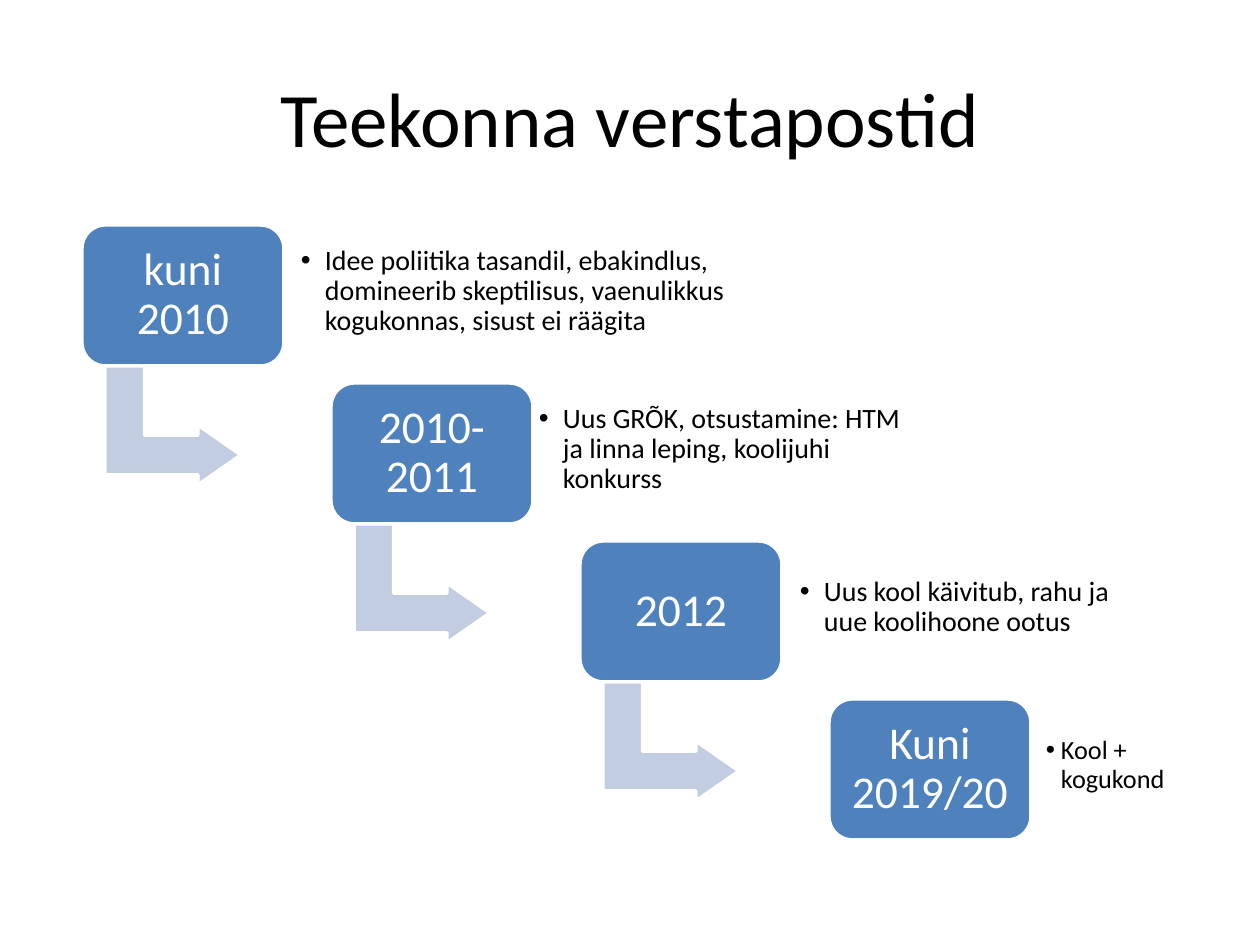
from lxml import etree
from pptx import Presentation
from pptx.dml.color import RGBColor
from pptx.enum.shapes import MSO_SHAPE
from pptx.enum.text import MSO_ANCHOR, PP_ALIGN
from pptx.oxml.ns import qn
from pptx.util import Emu, Pt

ROUNDED, BENT_ARROW = MSO_SHAPE.ROUNDED_RECTANGLE, MSO_SHAPE.BENT_UP_ARROW
MIDDLE = MSO_ANCHOR.MIDDLE
CENTER, LEFT = PP_ALIGN.CENTER, PP_ALIGN.LEFT
COLORS = {"step": "4F81BD", "arrow": "C2CDE1", "white": "FFFFFF", "text": "000000"}


def px(*lengths):
    return [Emu(round(length * 914400 / 126)) for length in lengths]


def write(shape, text, size, color="text", align=CENTER, inset=13, spacing=0.9, indent=0):
    frame = shape.text_frame
    frame.word_wrap = True
    frame.vertical_anchor = MIDDLE
    (frame.margin_left, frame.margin_top,
     frame.margin_right, frame.margin_bottom) = px(inset, inset, inset, inset)
    paragraph = frame.paragraphs[0]
    paragraph.text = text
    paragraph.alignment = align
    paragraph.line_spacing = spacing
    if indent:
        hang = px(indent)[0]
        properties = paragraph._p.get_or_add_pPr()
        properties.set("marL", str(hang))
        properties.set("indent", str(-hang))
        etree.SubElement(properties, qn("a:buFont")).set("typeface", "Arial")
        etree.SubElement(properties, qn("a:buChar")).set("char", "•")
    font = paragraph.runs[0].font
    font.name = "Calibri"
    font.size = Pt(size)
    font.color.rgb = RGBColor.from_string(COLORS[color])


prs = Presentation()
prs.slide_width, prs.slide_height = px(1260, 945)
slide = prs.slides.add_slide(prs.slide_layouts[6])
shapes = slide.shapes

# Title
title = shapes.add_textbox(*px(63, 38, 1134, 158))
write(title, "Teekonna verstapostid", 44, spacing=1)

# Milestones: period, description, its left, width, size, inset and indent
milestones = [
    ("kuni 2010", "Idee poliitika tasandil, ebakindlus, domineerib skeptilisus, "
     "vaenulikkus kogukonnas, sisust ei räägita", 292, 490, 16, 9, 24),
    ("2010-2011", "Uus GRÕK, otsustamine: HTM ja linna leping, koolijuhi konkurss",
     530, 384, 16, 9, 24),
    ("2012", "Uus kool käivitub, rahu ja uue koolihoone ootus", 791, 341, 16, 9, 24),
    ("Kuni 2019/20", "Kool + kogukond", 1036, 146, 15, 10, 15),
]

for i, (period, description, left, width, size, inset, indent) in enumerate(milestones):
    x, y = 82 + 249 * i, 225 + 158 * i
    parts = []

    # Arrow down to the next step
    if i < len(milestones) - 1:
        arrow = shapes.add_shape(BENT_ARROW, *px(x + 31, y + 132, 120, 136))
        arrow.rotation = 90
        for n, value in enumerate((0.33, 0.25, 0.36)):
            arrow.adjustments[n] = value
        parts.append((arrow, "arrow"))

    # Step box
    step = shapes.add_shape(ROUNDED, *px(x, y, 202, 141))
    parts.append((step, "step"))
    for part, color in parts:
        part.shadow.inherit = False
        part.fill.solid()
        part.fill.fore_color.rgb = RGBColor.from_string(COLORS[color])
        part.line.color.rgb = RGBColor.from_string(COLORS["white"])
        part.line.width = Pt(2)
    write(step, period, 26, color="white")

    # Description beside the step
    note = shapes.add_textbox(*px(left, y + 10, width, 113))
    write(note, description, size, align=LEFT, inset=inset, indent=indent)

prs.save("out.pptx")
